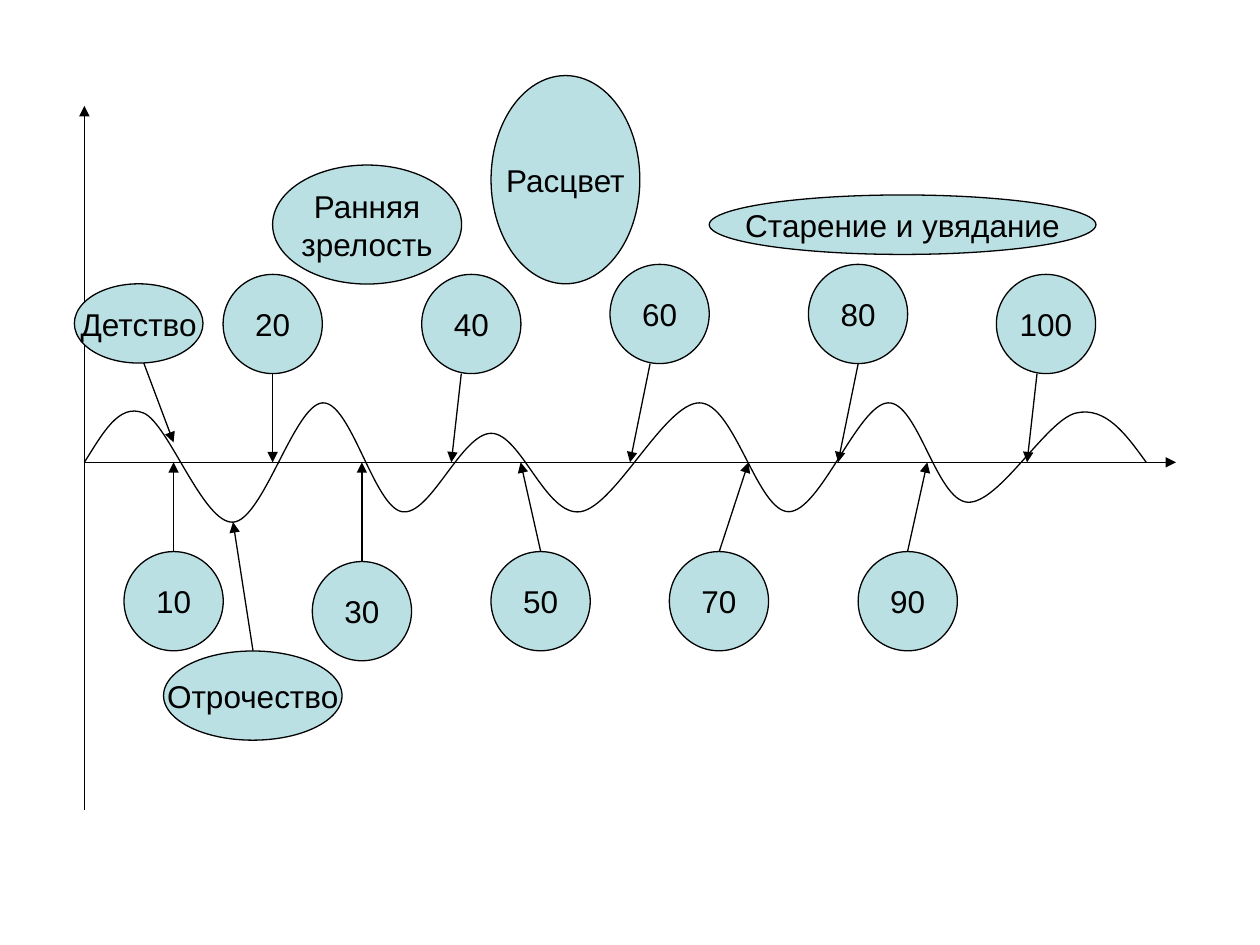
from pptx import Presentation
from pptx.dml.color import RGBColor
from pptx.enum.shapes import MSO_CONNECTOR, MSO_SHAPE
from pptx.enum.text import MSO_ANCHOR, PP_ALIGN
from pptx.oxml.ns import qn
from pptx.util import Pt
from lxml.etree import SubElement

INK, FILL = "000000", "BBE0E3"
AXIS = 264.2   # height of the time axis
BALL = 56.7    # diameter of an age circle
FRAME = {"word_wrap": False, "vertical_anchor": MSO_ANCHOR.MIDDLE}
FONT = {"name": "Arial", "size": Pt(18)}


def color(code):
    return RGBColor.from_string(code)


deck = Presentation()
deck.slide_width, deck.slide_height = Pt(720), Pt(540)
slide = deck.slides.add_slide(deck.slide_layouts[6])
shapes = slide.shapes.add_group_shape().shapes

# Wave: a smooth curve through its knots, the first and last only steer it
knots = [(18, 336), (48.2, AXIS), (82, 236), (133.2, 298.4), (184.3, 230.2),
         (229.7, 292.4), (280.7, 247.6), (331.7, 292.4), (399.7, 230.2),
         (450.7, 292.4), (507.4, 230.2), (553, 287), (615, 236),
         (655, AXIS), (684, 331)]
points = []
for a, b, c, d in zip(knots, knots[1:], knots[2:], knots[3:]):
    points.append([b[i] + (c[i] - a[i]) / 6 for i in (0, 1)])
    points.append([c[i] - (d[i] - b[i]) / 6 for i in (0, 1)])
    points.append(c)
pen = shapes.build_freeform(Pt(knots[1][0]), Pt(knots[1][1]))
pen.add_line_segments([(Pt(x), Pt(y)) for x, y in points], close=False)
wave = pen.convert_to_shape()
wave.shadow.inherit = False
wave.fill.background()
wave.line.color.rgb = color(INK)
wave.line.width = Pt(0.75)

# Turn each three straight steps into one Bezier segment
track = next(wave._element.iter(qn("a:path")))
steps = track.findall(qn("a:lnTo"))
for n in range(0, len(steps), 3):
    curve = SubElement(track, qn("a:cubicBezTo"))
    for step in steps[n:n + 3]:
        curve.append(step[0])
        track.remove(step)

# Age circles: left, top, arrow start x, arrow tip x
ages = [(70.9, 315.2, 99.2, 99.2), (127.5, 156.8, 155.8, 155.8),
        (178.5, 320.9, 206.8, 206.8), (241, 156.8, 263.6, 257.9),
        (280.6, 315.2, 309, 297.5), (348.6, 151.1, 371.5, 360),
        (382.5, 315.2, 411, 427.7), (462, 151.1, 490.4, 478.9),
        (490.4, 315.2, 518.6, 529.9), (569.4, 156.8, 592.6, 586.9)]

# Life stages: text, left, top, width, height
ovals = [("Ранняя\nзрелость", 155.8, 94.3, 108, 68),
         ("Расцвет", 280.6, 43.2, 85, 119),
         ("Старение и увядание", 405.3, 111.4, 221, 34),
         ("Отрочество", 93.5, 372, 102, 51),
         ("Детство", 42.5, 162.2, 73.5, 45.3)]

# Arrows: the two axes, then the pointers of two stages
arrows = [(48.2, 463, 48.2, 60.5), (48.2, AXIS, 672, AXIS),
          (144.6, 372, 133.2, 298.4), (82.2, 207.5, 99.2, 252.8)]

for n, (left, top, start, tip) in enumerate(ages, 1):
    ovals.append((str(n * 10), left, top, BALL, BALL))
    edge = top if top > AXIS else top + BALL
    arrows.append((start, edge, tip, AXIS))

# Draw the arrows
for ends in arrows:
    arrow = shapes.add_connector(MSO_CONNECTOR.STRAIGHT, *map(Pt, ends))
    arrow.line.color.rgb = color(INK)
    arrow.line.width = Pt(0.75)
    SubElement(arrow.line._get_or_add_ln(), qn("a:tailEnd"), type="triangle")
    SubElement(arrow._element.spPr, qn("a:effectLst"))

# Draw the ovals
for text, *box in ovals:
    oval = shapes.add_shape(MSO_SHAPE.OVAL, *map(Pt, box))
    oval.shadow.inherit = False
    oval.fill.solid()
    oval.fill.fore_color.rgb = color(FILL)
    oval.line.color.rgb = color(INK)
    oval.line.width = Pt(0.75)
    frame = oval.text_frame
    frame.text = text
    for key, value in FRAME.items():
        setattr(frame, key, value)
    for para in frame.paragraphs:
        para.alignment = PP_ALIGN.CENTER
        font = para.runs[0].font
        font.color.rgb = color(INK)
        for key, value in FONT.items():
            setattr(font, key, value)

deck.save("out.pptx")
